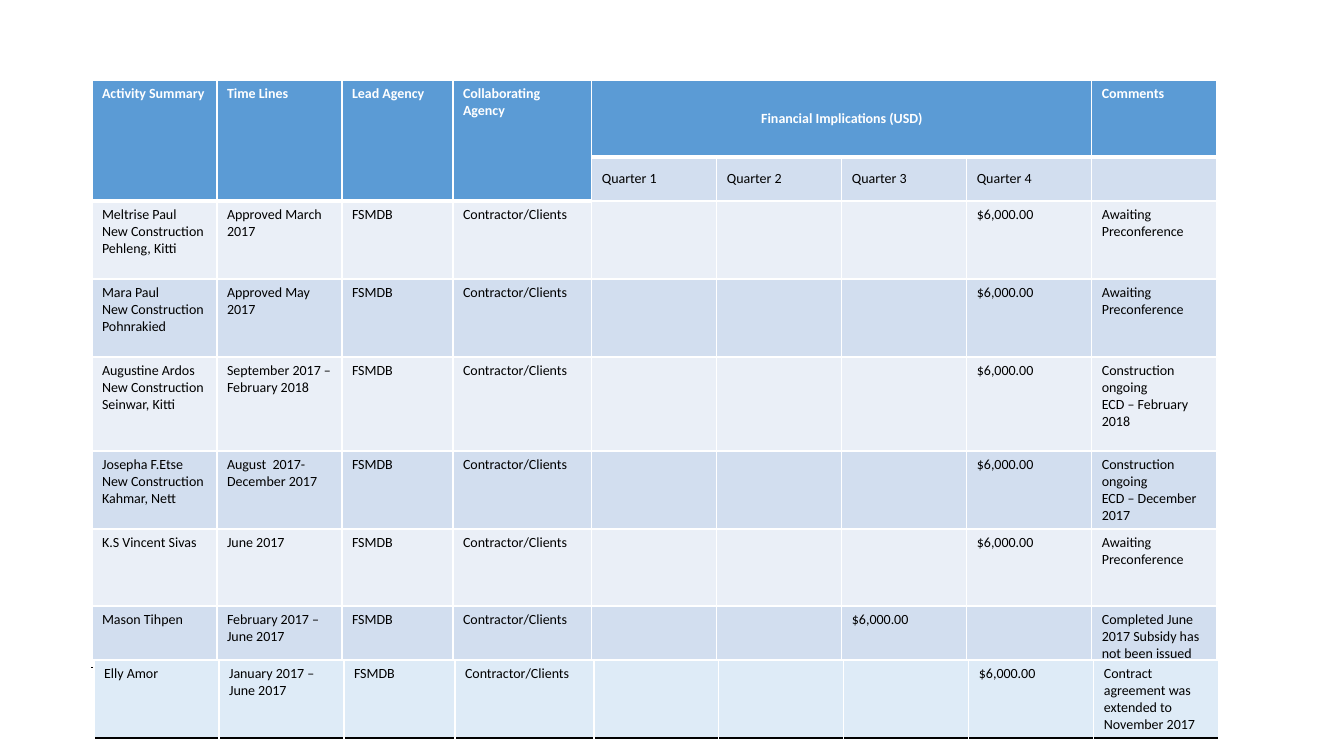
import pptx
import pptx.dml.color
import pptx.enum.text
import pptx.oxml
import pptx.oxml.ns
import pptx.util

# Content
HEADINGS = ["Activity Summary", "Time Lines", "Lead Agency", "Collaborating Agency",
            "Financial Implications (USD)", "", "", "", "Comments"]
QUARTERS = ["", "", "", "", "Quarter 1", "Quarter 2", "Quarter 3", "Quarter 4", ""]
AGENCY, PARTNER, SUBSIDY = "FSMDB", "Contractor/Clients", "$6,000.00"
# Activity, time line, quarter of the subsidy, comment
PROJECTS = [
    ("Meltrise Paul\nNew Construction\nPehleng, Kitti", "Approved March 2017", 4,
     "Awaiting Preconference"),
    ("Mara Paul\nNew Construction\nPohnrakied", "Approved May 2017", 4,
     "Awaiting Preconference"),
    ("Augustine Ardos\nNew Construction\nSeinwar, Kitti", "September 2017 – February 2018", 4,
     "Construction ongoing\nECD – February 2018"),
    ("Josepha F.Etse\nNew Construction\nKahmar, Nett", "August  2017-December 2017", 4,
     "Construction ongoing\nECD – December 2017"),
    ("K.S Vincent Sivas", "June 2017", 4, "Awaiting Preconference"),
    ("Mason Tihpen", "February 2017 – June 2017", 3,
     "Completed June 2017 Subsidy has not been issued"),
]
EXTENDED_PROJECT = ("Elly Amor", "January 2017 – June 2017", 4,
                    "Contract agreement was extended to November 2017")

# Layout in px, colours and text format
SCALE = 914400 / 100.8
SLIDE = (1344, 756)
COLUMNS = [125, 125, 111, 139, 125, 125, 125, 125, 125]
MAIN_ROWS = [77, 43, 78, 78, 94, 78, 77, 60]
MAIN_AT, EXTENDED_AT = (92, 80), (94, 660)
EXTENDED_ROWS = [78]
COLORS = {"header": "5B9BD5", "dark": "D2DEEF", "light": "EAEFF7", "extended": "DEEBF7",
          "white": "FFFFFF", "black": "000000"}
FORMAT = {"name": "Calibri", "size": pptx.util.Pt(10)}


def emu(px):
    return pptx.util.Emu(round(px * SCALE))


def rgb(name):
    return pptx.dml.color.RGBColor.from_string(COLORS[name])


def project_row(project):
    activity, timeline, quarter, comment = project
    amounts = [SUBSIDY if number == quarter else "" for number in range(1, 5)]
    return [activity, timeline, AGENCY, PARTNER, *amounts, comment]


def set_borders(cell, bottom_color, bottom_points):
    properties = cell._tc.get_or_add_tcPr()
    for side in "LRTB":
        color, points = (bottom_color, bottom_points) if side == "B" else ("white", 1)
        properties.append(pptx.oxml.parse_xml(
            f'<a:ln{side} {pptx.oxml.ns.nsdecls("a")} w="{pptx.util.Pt(points)}">'
            f'<a:solidFill><a:srgbClr val="{COLORS[color]}"/></a:solidFill></a:ln{side}>'))


def fill_cell(cell, text, fill, bold=False, bottom=("white", 1)):
    set_borders(cell, *bottom)
    cell.fill.solid()
    cell.fill.fore_color.rgb = rgb(fill)
    cell.text = text
    for para in cell.text_frame.paragraphs:
        for span in para.runs:
            for key, value in {**FORMAT, "bold": bold}.items():
                setattr(span.font, key, value)
            span.font.color.rgb = rgb("white" if bold else "black")


def add_grid(page, at, heights):
    frame = page.shapes.add_table(len(heights), len(COLUMNS), emu(at[0]), emu(at[1]),
                                  emu(sum(COLUMNS)), emu(sum(heights)))
    table = frame.table
    table.first_row = table.horz_banding = False
    for column, width in zip(table.columns, COLUMNS):
        column.width = emu(width)
    for row, height in zip(table.rows, heights):
        row.height = emu(height)
    return table


def main():
    deck = pptx.Presentation()
    deck.slide_width, deck.slide_height = map(emu, SLIDE)
    page = deck.slides.add_slide(deck.slide_layouts[6])

    # Main table
    table = add_grid(page, MAIN_AT, MAIN_ROWS)
    rows = [HEADINGS, QUARTERS] + [project_row(project) for project in PROJECTS]
    for r, texts in enumerate(rows):
        for c, text in enumerate(texts):
            heading = r == 0 or (r == 1 and c < 4)
            fill = "header" if heading else "dark" if r % 2 else "light"
            last = r == len(rows) - 1
            bottom = ("white", 3) if heading else ("black" if last else "white", 1)
            fill_cell(table.cell(r, c), text, fill, heading, bottom)

    # Merged headings
    for c in range(4):
        table.cell(0, c).merge(table.cell(1, c))
    table.cell(0, 4).merge(table.cell(0, 7))
    table.cell(0, 4).text_frame.paragraphs[0].alignment = pptx.enum.text.PP_ALIGN.CENTER
    for cell in [table.cell(0, 4)] + [table.cell(1, c) for c in range(4, 8)]:
        cell.vertical_anchor = pptx.enum.text.MSO_ANCHOR.MIDDLE

    # Extended project
    table = add_grid(page, EXTENDED_AT, EXTENDED_ROWS)
    for c, text in enumerate(project_row(EXTENDED_PROJECT)):
        fill_cell(table.cell(0, c), text, "extended", bottom=("black", 1))

    deck.save("out.pptx")


if __name__ == "__main__":
    main()
